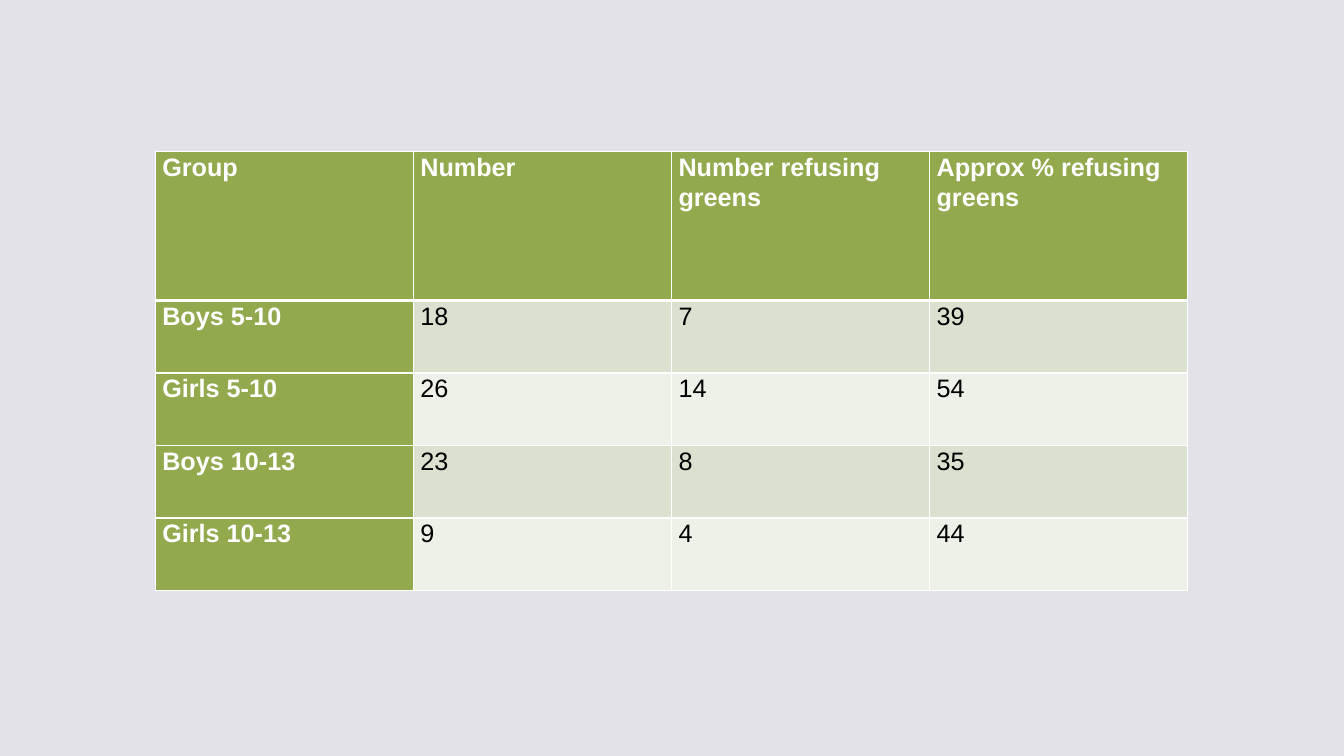
from lxml.etree import SubElement
from pptx import Presentation
from pptx.dml.color import RGBColor
from pptx.oxml.ns import qn
from pptx.util import Inches, Pt

GREEN, WHITE, BLACK = "93A94E", "FFFFFF", "000000"
BANDS = ["DBE1CF", "EEF1E8"]
ROWS = [
    ["Group", "Number", "Number refusing greens", "Approx % refusing greens"],
    ["Boys 5-10", "18", "7", "39"],
    ["Girls 5-10", "26", "14", "54"],
    ["Boys 10-13", "23", "8", "35"],
    ["Girls 10-13", "9", "4", "44"],
]


def paint(fill, color):
    """Give a fill one solid colour."""
    fill.solid()
    fill.fore_color.rgb = RGBColor.from_string(color)


def edge(cell, side, width):
    """Draw one white border of a cell."""
    line = SubElement(cell._tc.get_or_add_tcPr(), qn(f"a:ln{side}"), w=str(Pt(width)))
    solid = SubElement(line, qn("a:solidFill"))
    SubElement(solid, qn("a:srgbClr"), val=WHITE)


def write(cell, text, color, bold):
    """Put styled text in a cell."""
    cell.margin_left = cell.margin_right = Inches(0.07)
    cell.margin_top = cell.margin_bottom = 0
    para = cell.text_frame.paragraphs[0]
    para.line_spacing = 1.07
    run = para.add_run()
    run.text = text
    run.font.name = "Arial"
    run.font.size = Pt(18)
    run.font.bold = bold
    paint(run.font.fill, color)


def add_grid(slide):
    """Add the table of children refusing greens."""
    frame = slide.shapes.add_table(
        len(ROWS), len(ROWS[0]), Inches(1.54), Inches(1.5), Inches(10.24), Inches(4.36)
    )
    table = frame.table
    for col in table.columns:
        col.width = Inches(2.56)
    for r, texts in enumerate(ROWS):
        table.rows[r].height = Inches(0.72 if r else 1.48)
        for c, text in enumerate(texts):
            cell = table.cell(r, c)
            head = r == 0 or c == 0
            write(cell, text, WHITE if head else BLACK, head)
            widths = {"L": 1, "R": 1, "T": 3 if r == 1 else 1, "B": 1 if r else 3}
            for side, width in widths.items():
                edge(cell, side, width)
            paint(cell.fill, GREEN if head else BANDS[(r - 1) % 2])


def main():
    """Build and save the slide."""
    deck = Presentation()
    deck.slide_width, deck.slide_height = Inches(13.33), Inches(7.5)
    slide = deck.slides.add_slide(deck.slide_layouts[6])
    paint(slide.background.fill, "E3E2E8")
    add_grid(slide)
    deck.save("out.pptx")


if __name__ == "__main__":
    main()
